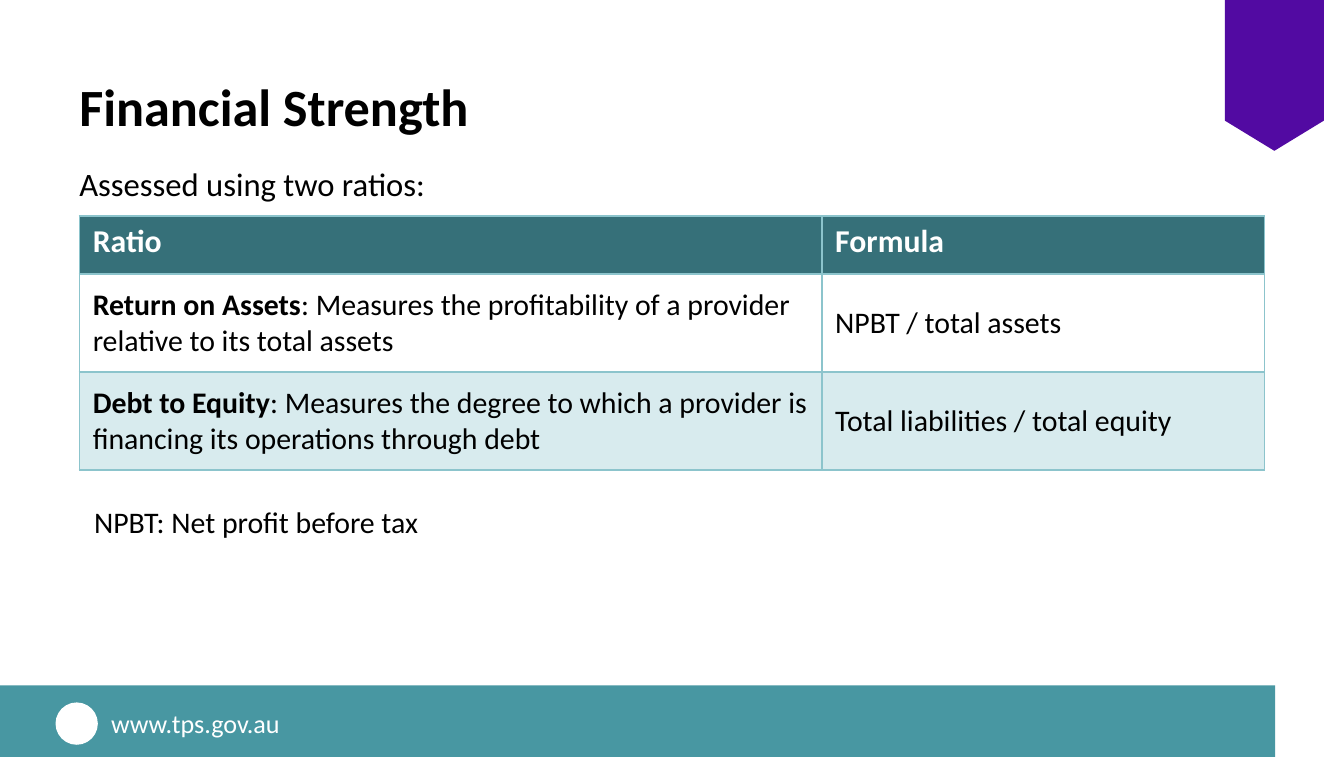
import pptx
import pptx.dml.color
import pptx.enum.shapes
import pptx.enum.text
import pptx.oxml
import pptx.oxml.ns
import pptx.util

Cm = pptx.util.Cm
Pt = pptx.util.Pt
SHAPE = pptx.enum.shapes.MSO_SHAPE
ANCHOR = pptx.enum.text.MSO_ANCHOR
ALIGN = pptx.enum.text.PP_ALIGN
FIT = pptx.enum.text.MSO_AUTO_SIZE

FONT = "Calibri"
BLACK, WHITE = "000000", "FFFFFF"
TEAL, DARK_TEAL, PALE_TEAL, BORDER = "4897A2", "367079", "D8EBEE", "8CC4CC"
PURPLE = "520AA2"
LEFT, CONTENT_WIDTH = 1.5, 22.4
COLUMN_WIDTHS = (14.03, 8.37)
ROW_HEIGHTS = (1.1, 1.85, 1.85)
ROW_FILLS = (DARK_TEAL, None, PALE_TEAL)
ROWS = (
    ("Ratio", "Formula"),
    (("Return on Assets", ": Measures the profitability of a provider relative to its total assets"),
     "NPBT / total assets"),
    (("Debt to Equity", ": Measures the degree to which a provider is financing its operations through debt"),
     "Total liabilities / total equity"),
)


def color(value):
    return pptx.dml.color.RGBColor.from_string(value)


def apply(target, values):
    for name, value in values.items():
        setattr(target, name, value)


def add_run(paragraph, text, size, fill=BLACK, bold=False):
    run = paragraph.add_run()
    run.text = text
    apply(run.font, {"name": FONT, "size": Pt(size), "bold": bold})
    run.font.color.rgb = color(fill)


def place(shape, left, top, width, height):
    apply(shape, {"left": Cm(left), "top": Cm(top), "width": Cm(width), "height": Cm(height)})


def fill_frame(frame, text, size, fill=BLACK, bold=False, space_after=0, margin=0,
               anchor=ANCHOR.TOP, wrap=True):
    apply(frame, {
        "margin_left": Cm(margin), "margin_right": Cm(margin),
        "margin_top": Cm(margin / 2), "margin_bottom": Cm(margin / 2),
        "vertical_anchor": anchor, "word_wrap": wrap, "auto_size": FIT.NONE,
    })
    paragraph = frame.paragraphs[0]
    apply(paragraph, {"alignment": ALIGN.LEFT, "space_after": Pt(space_after)})
    add_run(paragraph, text, size, fill, bold)


def add_title(slide, text):
    title = slide.shapes.title
    place(title, LEFT, 1.4, CONTENT_WIDTH, 1.19)
    fill_frame(title.text_frame, text, 28, bold=True, space_after=2)


def add_text(slide, box, text, size, **values):
    shape = slide.shapes.add_textbox(*(Cm(length) for length in box))
    fill_frame(shape.text_frame, text, size, **values)


def add_filled_shape(slide, kind, box, fill):
    shape = slide.shapes.add_shape(kind, *(Cm(length) for length in box))
    shape.shadow.inherit = False
    shape.fill.solid()
    shape.fill.fore_color.rgb = color(fill)
    shape.line.fill.background()


def add_borders(cell, top, bottom):
    properties = cell._tc.get_or_add_tcPr()
    for side, width in (("L", 1), ("R", 1), ("T", top), ("B", bottom)):
        properties.append(pptx.oxml.parse_xml(
            f'<a:ln{side} {pptx.oxml.ns.nsdecls("a")} w="{Pt(width)}"><a:solidFill>'
            f'<a:srgbClr val="{BORDER}"/></a:solidFill></a:ln{side}>'))


def format_cell(cell, content, row_index, column_index):
    header = row_index == 0
    last = row_index == len(ROWS) - 1
    add_borders(cell, 1 if header else 1.5, 1 if last else 1.5)
    fill = ROW_FILLS[row_index]
    if fill:
        cell.fill.solid()
        cell.fill.fore_color.rgb = color(fill)
    else:
        cell.fill.background()
    cell.vertical_anchor = ANCHOR.TOP if header else ANCHOR.MIDDLE
    paragraph = cell.text_frame.paragraphs[0]
    if header:
        add_run(paragraph, content, 17, WHITE, True)
        return
    paragraph.space_after = Pt(6)
    if column_index == 0:
        term, meaning = content
        add_run(paragraph, term, 16, bold=True)
        add_run(paragraph, meaning, 16)
    else:
        add_run(paragraph, content, 16)


def add_ratio_table(slide):
    frame = slide.shapes.add_table(len(ROWS), len(COLUMN_WIDTHS), Cm(LEFT), Cm(4.08),
                                   Cm(CONTENT_WIDTH), Cm(sum(ROW_HEIGHTS)))
    table = frame.table
    for column, width in zip(table.columns, COLUMN_WIDTHS):
        column.width = Cm(width)
    for row_index, contents in enumerate(ROWS):
        table.rows[row_index].height = Cm(ROW_HEIGHTS[row_index])
        for column_index, content in enumerate(contents):
            format_cell(table.cell(row_index, column_index), content, row_index, column_index)


def add_footer(slide):
    add_filled_shape(slide, SHAPE.RECTANGLE, (0, 12.95, 24.1, 1.35), TEAL)
    add_text(slide, (1.85, 13.22, 3.76, 0.86), "www.tps.gov.au", 14, fill=WHITE,
             margin=0.25, anchor=ANCHOR.MIDDLE, wrap=False)
    add_filled_shape(slide, SHAPE.OVAL, (1.05, 13.27, 0.8, 0.8), WHITE)


def main():
    presentation = pptx.Presentation()
    apply(presentation, {"slide_width": Cm(25.4), "slide_height": Cm(14.3)})
    slide = presentation.slides.add_slide(presentation.slide_layouts[5])
    add_title(slide, "Financial Strength")
    add_text(slide, (LEFT, 3.1, CONTENT_WIDTH, 0.74), "Assessed using two ratios:", 17.5,
             space_after=12)
    add_ratio_table(slide)
    add_footer(slide)
    add_text(slide, (1.78, 8.92, 22.12, 1.27), "NPBT: Net profit before tax", 16,
             anchor=ANCHOR.BOTTOM)
    add_filled_shape(slide, SHAPE.FLOWCHART_OFFPAGE_CONNECTOR, (23.15, 0, 1.87, 2.85), PURPLE)
    presentation.save("out.pptx")


if __name__ == "__main__":
    main()
